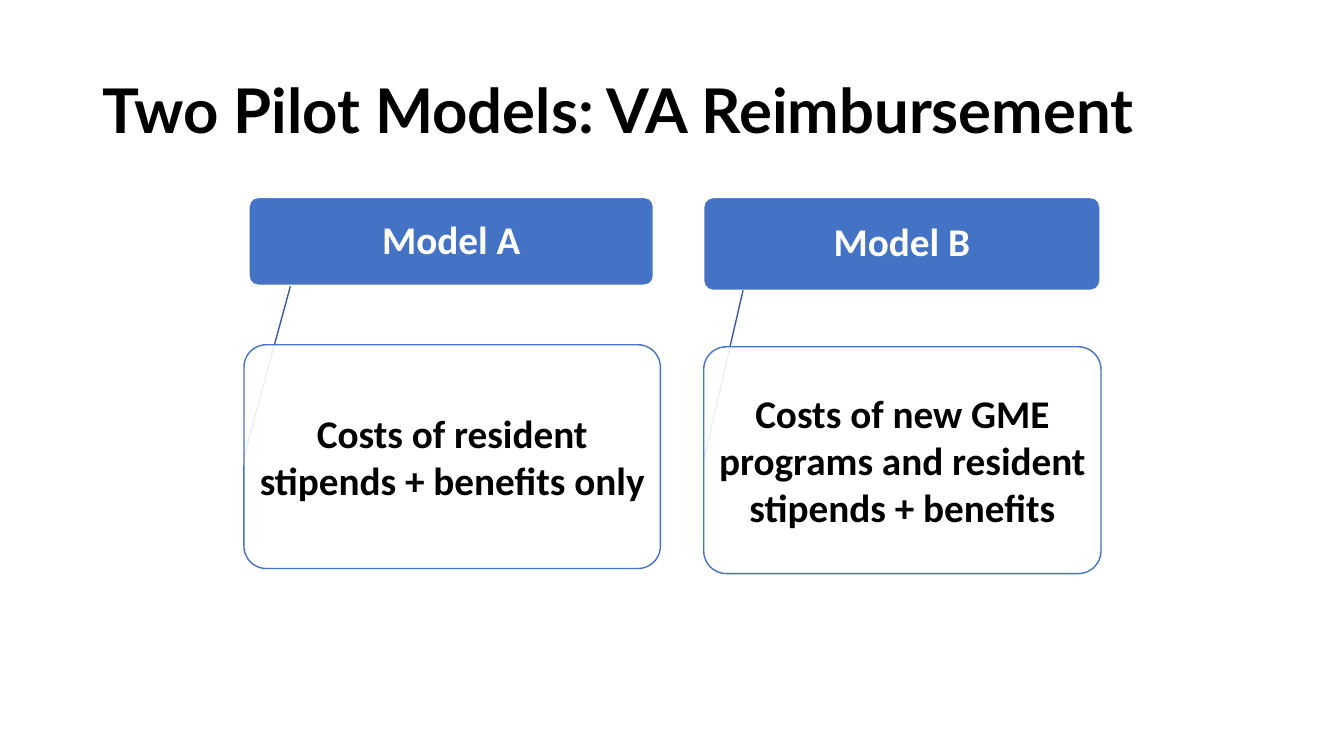
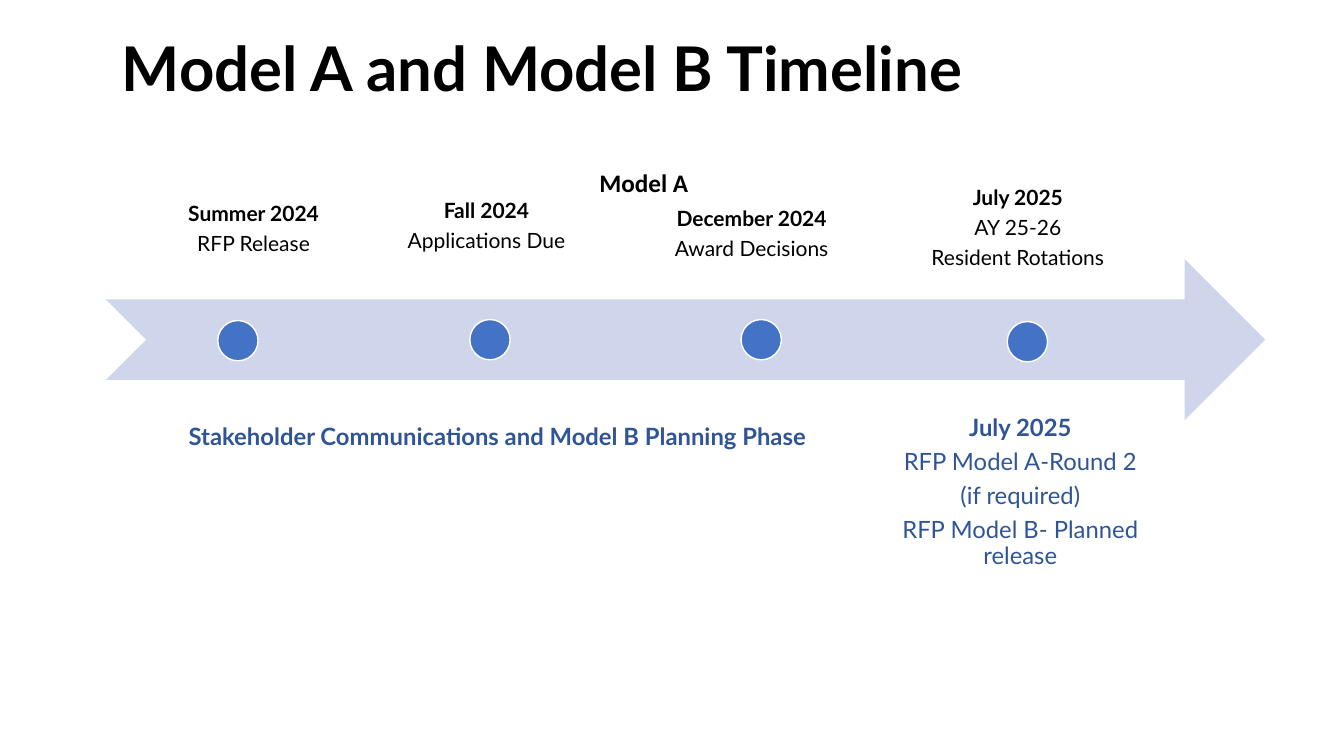
import pptx
import pptx.util
import pptx.dml.color
import pptx.enum.shapes
import pptx.enum.text
import lxml.etree
import pptx.oxml.ns

PX = 9144  # 100 px to the inch
HEX = {"black": "000000", "white": "FFFFFF", "blue": "4472C4",
       "line": "365B9D", "pale": "CFD5EA", "navy": "2F5597"}
KIND = pptx.enum.shapes.MSO_SHAPE
ALIGN = pptx.enum.text.PP_ALIGN
ANCHOR = pptx.enum.text.MSO_ANCHOR
qn = pptx.oxml.ns.qn


def color(name):
    return pptx.dml.color.RGBColor.from_string(HEX[name])


def write(shape, lines, size, font="Lato", ink="black", bold="all", align=ALIGN.CENTER,
          anchor=ANCHOR.TOP, inset=(10, 5), space=None, after=0):
    """Fill a shape with one paragraph per line; bold is "all" or "first"."""
    frame = shape.text_frame
    frame.word_wrap = True
    frame.vertical_anchor = anchor
    frame.margin_left = frame.margin_right = inset[0] * PX
    frame.margin_top = frame.margin_bottom = inset[1] * PX
    for i, line in enumerate(lines):
        para = frame.paragraphs[0] if i == 0 else frame.add_paragraph()
        para.alignment = align
        para.line_spacing = space
        para.space_after = pptx.util.Pt(size * after)
        run = para.add_run()
        run.text = line
        run.font.name = font
        run.font.size = pptx.util.Pt(size)
        run.font.bold = bold == "all" or i == 0
        run.font.color.rgb = color(ink)


def draw(slide, kind, x, y, w, h, fill, line=None):
    """Add a preset shape with a plain fill and an optional 1 pt line."""
    shape = slide.shapes.add_shape(kind, x * PX, y * PX, w * PX, h * PX)
    shape.shadow.inherit = False
    shape.fill.solid()
    shape.fill.fore_color.rgb = color(fill)
    if line:
        shape.line.color.rgb = color(line)
        shape.line.width = pptx.util.Pt(1)
    else:
        shape.line.fill.background()
    return shape


deck = pptx.Presentation()
deck.slide_width, deck.slide_height = 1333 * PX, 750 * PX

# Slides and their titles
pages = []
for title, x, y, h in [("Two Pilot Models: VA Reimbursement", 92, 40, 145),
                       ("Model A and Model B Timeline", 111, 0, 143)]:
    page = deck.slides.add_slide(deck.slide_layouts[6])
    box = page.shapes.add_textbox(x * PX, y * PX, 1150 * PX, h * PX)
    write(box, [title], 44, align=ALIGN.LEFT, anchor=ANCHOR.MIDDLE, space=0.9)
    pages.append(page)
models, timeline = pages

# Slide 1: a header, a line and a body for each model
card = {"size": 28, "font": "Calibri", "anchor": ANCHOR.MIDDLE, "inset": (6, 4)}
for name, cost, top, start, low in [
        ("Model A", "Costs of resident stipends + benefits only",
         (247, 196, 401, 87), (288, 284), (242, 342, 413, 222)),
        ("Model B", "Costs of new GME programs and resident stipends + benefits",
         (698, 196, 393, 92), (737, 288), (698, 344, 394, 225))]:
    head = draw(models, KIND.ROUNDED_RECTANGLE, *top, "blue", "white")
    head.adjustments[0] = 0.1
    write(head, [name], ink="white", space=0.9, after=0.35, **card)

    link = models.shapes.add_connector(
        pptx.enum.shapes.MSO_CONNECTOR.STRAIGHT, start[0] * PX, start[1] * PX,
        low[0] * PX, (low[1] + low[3] // 2) * PX)
    link.line.color.rgb = color("line")
    link.line.width = pptx.util.Pt(1)
    lxml.etree.SubElement(link._element.spPr, qn("a:effectLst"))

    body = draw(models, KIND.ROUNDED_RECTANGLE, *low, "white", "blue")
    body.adjustments[0] = 0.1
    tint = body._element.spPr.find(qn("a:solidFill"))[0]
    lxml.etree.SubElement(tint, qn("a:alpha"), val="90000")
    write(body, [cost], **card)
    link.end_connect(body, 1)

# Slide 2: arrow
draw(timeline, KIND.NOTCHED_RIGHT_ARROW, 105, 257, 1150, 160, "pale")

# Milestones: label above, dot on the arrow
for lines, x, y, h, anchor, dot in [
        (["Summer 2024", "RFP Release"], 127, 177, 89, ANCHOR.BOTTOM, (216, 318)),
        (["Fall 2024", "Applications Due"], 358, 187, 98, ANCHOR.TOP, (466, 317)),
        (["December 2024", "Award Decisions"], 621, 184, 87, ANCHOR.BOTTOM, (735, 317)),
        (["July 2025", "AY 25-26", "Resident Rotations"],
         885, 174, 111, ANCHOR.TOP, (999, 319))]:
    label = timeline.shapes.add_textbox(x * PX, y * PX, 249 * PX, h * PX)
    write(label, lines, 15, bold="first", anchor=anchor, inset=(12, 12),
          space=0.9, after=0.35)
    draw(timeline, KIND.OVAL, *dot, 40, 40, "blue", "white")

# Next round below the arrow
plan = draw(timeline, KIND.RECTANGLE, 869, 400, 286, 147, "white")
write(plan, ["July 2025", "RFP Model A-Round 2", "(if required)",
             "RFP Model B- Planned release"],
      17, ink="navy", bold="first", inset=(13, 13), space=0.9, after=0.35)

# Captions
phase = timeline.shapes.add_textbox(172 * PX, 413 * PX, 643 * PX, 40 * PX)
write(phase, ["Stakeholder Communications and Model B Planning Phase"], 17, ink="navy")
label = timeline.shapes.add_textbox(172 * PX, 161 * PX, 933 * PX, 40 * PX)
write(label, ["Model A"], 18, font="Calibri")

deck.save("out.pptx")
